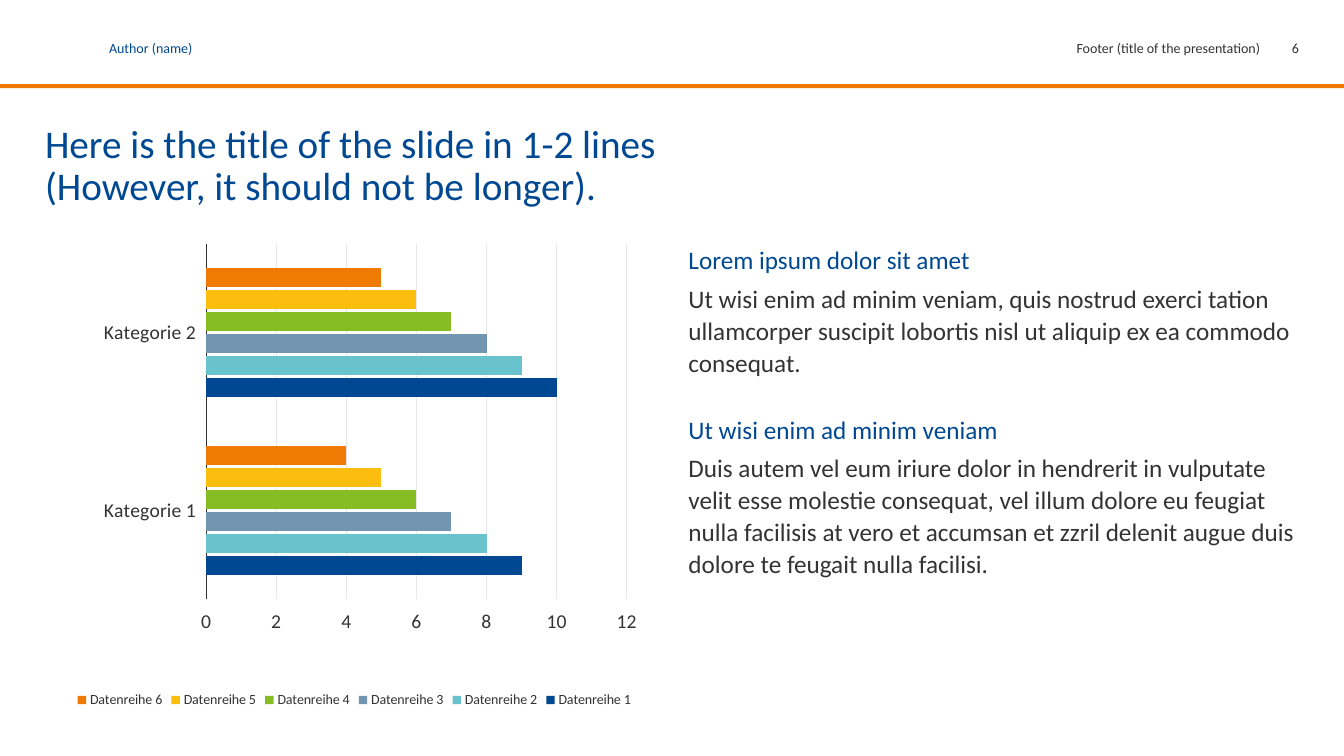
from lxml import etree
from pptx import Presentation
from pptx.chart.data import CategoryChartData
from pptx.dml.color import RGBColor
from pptx.enum.chart import XL_CHART_TYPE, XL_LEGEND_POSITION, XL_TICK_LABEL_POSITION, XL_TICK_MARK
from pptx.enum.shapes import MSO_SHAPE
from pptx.enum.text import PP_ALIGN
from pptx.oxml.ns import qn
from pptx.util import Emu, Pt

BAR_CLUSTERED = XL_CHART_TYPE.BAR_CLUSTERED
LEGEND_BOTTOM = XL_LEGEND_POSITION.BOTTOM
LABELS_LOW = XL_TICK_LABEL_POSITION.LOW
TICK_NONE, TICK_OUT = XL_TICK_MARK.NONE, XL_TICK_MARK.OUTSIDE
RECTANGLE = MSO_SHAPE.RECTANGLE
LEFT, RIGHT = PP_ALIGN.LEFT, PP_ALIGN.RIGHT

EMU_PER_PX = 9080
FONT = "Calibri"
BLUE, ORANGE, DARK, GRID = "004992", "EF7B05", "333333", "E6E7E8"
SERIES_COLORS = [BLUE, "68C3CD", "7296AF", "87BD24", "FCBE0E", ORANGE]
CATEGORIES = ["Kategorie 1", "Kategorie 2"]
TITLE_LINES = ["Here is the title of the slide in 1-2 lines",
               "(However, it should not be longer)."]
SECTIONS = [
    ("Lorem ipsum dolor sit amet",
     "Ut wisi enim ad minim veniam, quis nostrud exerci tation ullamcorper "
     "suscipit lobortis nisl ut aliquip ex ea commodo consequat."),
    ("Ut wisi enim ad minim veniam",
     "Duis autem vel eum iriure dolor in hendrerit in vulputate velit esse "
     "molestie consequat, vel illum dolore eu feugiat nulla facilisis at vero "
     "et accumsan et zzril delenit augue duis dolore te feugait nulla facilisi."),
]


def px(length):
    return Emu(length * EMU_PER_PX)


def rgb(color):
    return RGBColor.from_string(color)


def style_font(font, size, color):
    font.name, font.size = FONT, Pt(size)
    font.color.rgb = rgb(color)


def add_run(paragraph, text, size, color):
    run = paragraph.add_run()
    run.text = text
    style_font(run.font, size, color)


def add_text_frame(slide, box, top_inset=0):
    frame = slide.shapes.add_textbox(*map(px, box)).text_frame
    frame.word_wrap = True
    frame.margin_left = frame.margin_right = frame.margin_bottom = 0
    frame.margin_top = px(top_inset)
    return frame


def add_header(slide, box):
    left, top, width, height = box
    # Orange rule along the bottom of the header
    rule = slide.shapes.add_shape(RECTANGLE, px(left), px(top + height - 4), px(width), px(4))
    rule.shadow.inherit = False
    rule.fill.solid()
    rule.fill.fore_color.rgb = rgb(ORANGE)
    rule.line.fill.background()

    # Author, footer and page number
    entries = [("Author (name)", 109, 333, LEFT, BLUE),
               ("Footer (title of the presentation)", 688, 571, RIGHT, DARK),
               ("6", 1259, 39, RIGHT, DARK)]
    for text, offset, entry_width, alignment, color in entries:
        frame = add_text_frame(slide, (left + offset, top + 36, entry_width, 24), 3)
        paragraph = frame.paragraphs[0]
        paragraph.alignment = alignment
        add_run(paragraph, text, 10, color)


def add_title(slide, box):
    title = add_text_frame(slide, box).paragraphs[0]
    title.line_spacing = 0.9
    add_run(title, TITLE_LINES[0], 28, BLUE)
    title.add_line_break()
    add_run(title, TITLE_LINES[1], 28, BLUE)


def add_sections(slide, box):
    frame = add_text_frame(slide, box)
    for index, (heading, body) in enumerate(SECTIONS):
        heading_line = frame.add_paragraph() if index else frame.paragraphs[0]
        if index:
            heading_line.space_before = Pt(20)
        add_run(heading_line, heading, 18, BLUE)
        body_text = frame.add_paragraph()
        body_text.space_before = body_text.space_after = Pt(5)
        add_run(body_text, body, 18, DARK)
    for paragraph in frame.paragraphs:
        paragraph.line_spacing = 1.05


def set_plot_layout(chart, **fractions):
    plot_area = chart._chartSpace.chart.plotArea
    for old_layout in plot_area.findall(qn("c:layout")):
        plot_area.remove(old_layout)
    layout = etree.Element(qn("c:layout"))
    manual = etree.SubElement(layout, qn("c:manualLayout"))
    settings = {"layoutTarget": "inner", "xMode": "edge", "yMode": "edge", **fractions}
    for tag, value in settings.items():
        etree.SubElement(manual, qn(f"c:{tag}")).set("val", str(value))
    plot_area.insert(0, layout)


def add_bar_chart(slide, box):
    data = CategoryChartData()
    data.categories = CATEGORIES
    for index in range(len(SERIES_COLORS)):
        data.add_series(f"Datenreihe {index + 1}", (9 - index, 10 - index))
    chart = slide.shapes.add_chart(BAR_CLUSTERED, *map(px, box), data).chart
    chart.has_title = False
    style_font(chart.font, 18, DARK)
    set_plot_layout(chart, x=0.25, y=0, w=0.71, h=0.76)

    # Bars
    bars = chart.plots[0]
    bars.gap_width, bars.overlap = 250, -15
    bars.vary_by_categories = False
    for series, color in zip(bars.series, SERIES_COLORS):
        series.format.fill.solid()
        series.format.fill.fore_color.rgb = rgb(color)

    # Axes
    categories, values = chart.category_axis, chart.value_axis
    for axis in (categories, values):
        style_font(axis.tick_labels.font, 14, DARK)
    categories.major_tick_mark = TICK_NONE
    categories.tick_label_position = LABELS_LOW
    values.major_tick_mark = TICK_OUT
    values.minimum_scale, values.maximum_scale, values.major_unit = 0, 12, 2
    values.format.line.fill.background()
    for line, color in ((categories.format.line, DARK),
                        (values.major_gridlines.format.line, GRID)):
        line.color.rgb = rgb(color)
        line.width = Pt(0.5)

    # Legend
    chart.has_legend = True
    chart.legend.position = LEGEND_BOTTOM
    chart.legend.include_in_layout = False
    style_font(chart.legend.font, 10, DARK)


def main():
    presentation = Presentation()
    presentation.slide_width, presentation.slide_height = px(1343), px(755)
    slide = presentation.slides.add_slide(presentation.slide_layouts[6])
    add_header(slide, (0, 0, 1343, 88))
    add_title(slide, (45, 124, 1253, 79))
    add_sections(slide, (688, 243, 610, 468))
    add_bar_chart(slide, (58, 243, 592, 468))
    presentation.save("out.pptx")


if __name__ == "__main__":
    main()
